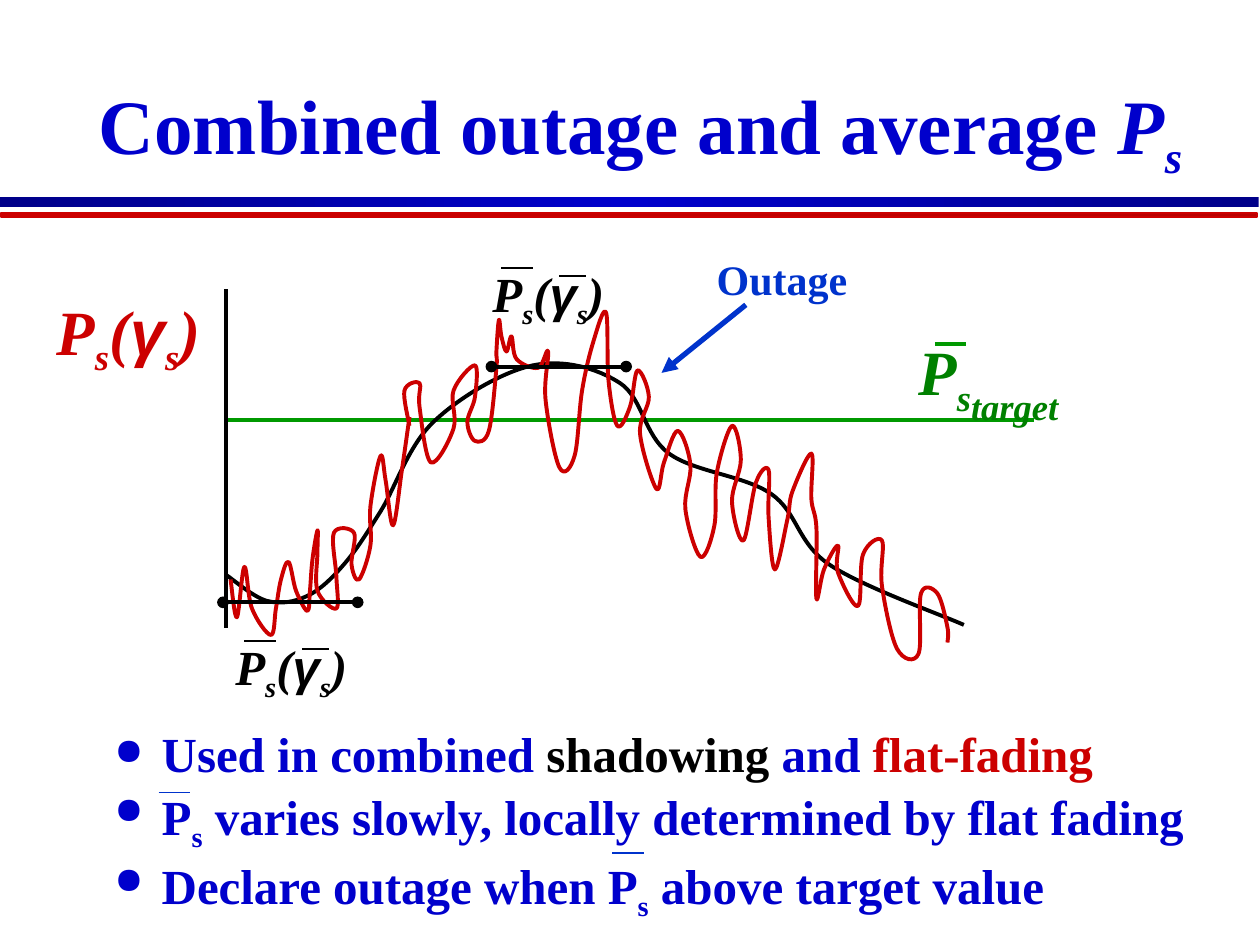
from copy import deepcopy
from dataclasses import dataclass

from lxml import etree
from pptx import Presentation
from pptx.dml.color import RGBColor
from pptx.enum.shapes import MSO_CONNECTOR, MSO_SHAPE
from pptx.enum.text import MSO_ANCHOR, MSO_AUTO_SIZE, PP_ALIGN
from pptx.oxml.ns import qn
from pptx.util import Pt

STRAIGHT = MSO_CONNECTOR.STRAIGHT
RECTANGLE = MSO_SHAPE.RECTANGLE
BOTTOM, TOP = MSO_ANCHOR.BOTTOM, MSO_ANCHOR.TOP
CENTER, LEFT = PP_ALIGN.CENTER, PP_ALIGN.LEFT
FIT_SHAPE = MSO_AUTO_SIZE.SHAPE_TO_FIT_TEXT

BLUE = RGBColor(0x00, 0x00, 0xCC)
DARK_BLUE = RGBColor(0x00, 0x00, 0x89)
BRIGHT_BLUE = RGBColor(0x00, 0x33, 0xCC)
RED = RGBColor(0xCC, 0x00, 0x00)
DARK_RED = RGBColor(0xB9, 0x00, 0x00)
GREEN = RGBColor(0x00, 0x99, 0x00)
DARK_GREEN = RGBColor(0x00, 0x80, 0x00)
BLACK = RGBColor(0x00, 0x00, 0x00)

SERIF, SANS = "Times New Roman", "Arial"
SUB, LOW_SUB = -25, -40  # baseline shift, percent
GRID = 0.72  # points per unit of the curve knots


@dataclass(frozen=True)
class Run:
    text: str
    base: int = 0
    font: str = SERIF
    color: RGBColor | None = None
    italic: bool | None = None


@dataclass(frozen=True)
class Bullet:
    spacing: float
    runs: tuple[Run, ...]


@dataclass(frozen=True)
class Curve:
    color: RGBColor
    knots: tuple[tuple[int, int], ...]


P_GAMMA = (Run("P"), Run("s", SUB), Run("("), Run("γ", font=SANS), Run("s", SUB), Run(")"))
BULLETS = (
    Bullet(1.1, (Run("Used in combined "), Run("shadowing", color=BLACK), Run(" and "),
                 Run("flat-fading", color=RED))),
    Bullet(0.8, (Run("P"), Run("s", SUB),
                 Run(" varies slowly, locally determined by flat fading"))),
    Bullet(0.9, (Run("Declare outage when P"), Run("s", SUB), Run(" above target value"))),
)
SHADOWING = Curve(BLACK, (
    (179, 456), (212, 477), (244, 473), (273, 448), (302, 406), (344, 335),
    (423, 290), (492, 304), (531, 360), (612, 392), (658, 448), (765, 496)))
FADING_RISE = Curve(RED, (
    (183, 460), (188, 490), (194, 450), (200, 483), (215, 504), (219, 483),
    (223, 460), (229, 446), (235, 469), (244, 485), (246, 469), (248, 444),
    (252, 421), (252, 438), (252, 469), (267, 483), (267, 458), (265, 423),
    (281, 423), (279, 448), (285, 460), (294, 433), (294, 402), (302, 362),
    (306, 381), (312, 417), (319, 373), (325, 331)))
FADING_FALL = Curve(RED, (
    (325, 338), (321, 310), (333, 304), (333, 323), (342, 367), (360, 340),
    (360, 310), (377, 290), (377, 315), (371, 335), (377, 350), (388, 342),
    (394, 292), (394, 279), (396, 254), (398, 267), (402, 279), (406, 267),
    (410, 285), (427, 292), (435, 279), (433, 317), (444, 371), (456, 362),
    (462, 310), (471, 271), (481, 248), (483, 302), (490, 338), (500, 323),
    (506, 294), (515, 315), (508, 344), (521, 388), (527, 367), (538, 342),
    (548, 369), (544, 404), (556, 442), (567, 417), (569, 375), (581, 338),
    (588, 365), (581, 398), (590, 429), (600, 383), (610, 373), (610, 410),
    (615, 452), (625, 412), (629, 390), (644, 360), (644, 396), (648, 419),
    (648, 475), (654, 452), (665, 433), (665, 454), (681, 481), (685, 440),
    (700, 429), (700, 465), (712, 515), (729, 519), (731, 471), (744, 471),
    (752, 498), (752, 510)))


def add_run(p, text: str, *, size: float, color: RGBColor, font: str = SERIF,
            italic: bool = False, base: int = 0) -> None:
    r = p.add_run()
    r.text = text
    r.font.name, r.font.size = font, Pt(size)
    r.font.bold, r.font.italic = True, italic
    r.font.color.rgb = color
    if base:
        r._r.get_or_add_rPr().set("baseline", str(base * 1000))


def add_runs(p, runs: tuple[Run, ...], size: float, color: RGBColor, italic: bool = False) -> None:
    for run in runs:
        add_run(p, run.text, size=size, color=run.color or color, font=run.font,
                italic=italic if run.italic is None else run.italic, base=run.base)


def add_box(shapes, x: float, y: float, w: float, h: float, wrap: bool = False):
    tf = shapes.add_textbox(Pt(x), Pt(y), Pt(w), Pt(h)).text_frame
    tf.word_wrap = wrap
    if not wrap:
        tf.auto_size = FIT_SHAPE
    return tf


def add_line(shapes, x1: float, y1: float, x2: float, y2: float, color: RGBColor,
             width: float = 2.25, head: str = "", tail: str = "") -> None:
    sp = shapes.add_connector(STRAIGHT, Pt(x1), Pt(y1), Pt(x2), Pt(y2))
    sp.line.color.rgb, sp.line.width = color, Pt(width)
    for tag, kind in (("a:headEnd", head), ("a:tailEnd", tail)):
        if kind:
            etree.SubElement(sp.line._get_or_add_ln(), qn(tag), type=kind)
    etree.SubElement(sp._element.spPr, qn("a:effectLst"))


def add_rule(shapes, x: float, y: float, w: float, h: float, colors: tuple[RGBColor, ...]):
    """Draw a bar filled with a left-to-right gradient of evenly spaced colours."""
    sp = shapes.add_shape(RECTANGLE, Pt(x), Pt(y), Pt(w), Pt(h))
    sp.shadow.inherit = False
    sp.fill.gradient()
    sp.fill.gradient_angle = 0
    stops = sp._element.spPr.find(qn("a:gradFill")).find(qn("a:gsLst"))
    while len(stops) < len(colors):
        stops.append(deepcopy(stops[0]))
    for i, (stop, color) in enumerate(zip(sp.fill.gradient_stops, colors)):
        stop.position = i / (len(colors) - 1)
        stop.color.rgb = color
    sp.line.fill.background()
    return sp


def add_curve(shapes, curve: Curve) -> None:
    """Draw a smooth open curve through the knots (Catmull-Rom as Béziers)."""
    pts = [(Pt(x * GRID), Pt(y * GRID)) for x, y in curve.knots]
    builder = shapes.build_freeform(*pts[0])
    builder.add_line_segments(pts[1:], close=False)
    sp = builder.convert_to_shape()
    sp.shadow.inherit = False
    sp.fill.background()
    sp.line.color.rgb, sp.line.width = curve.color, Pt(2.25)
    padded = [pts[0], *pts, pts[-1]]
    for i, segment in enumerate(list(sp._element.iter(qn("a:lnTo")))):
        before, start, end, after = padded[i:i + 4]
        controls = ([s + (e - b) / 6 for b, s, e in zip(before, start, end)],
                    [e - (a - s) / 6 for s, e, a in zip(start, end, after)], end)
        bezier = etree.Element(qn("a:cubicBezTo"))
        for x, y in controls:
            etree.SubElement(bezier, qn("a:pt"), x=str(round(x - sp.left)), y=str(round(y - sp.top)))
        segment.getparent().replace(segment, bezier)


def add_average(shapes, x: float, y: float) -> None:
    """Draw the averaged error symbol with its two overbars as one group."""
    group = shapes.add_group_shape().shapes
    add_runs(add_box(group, x, y, 78.5, 41).paragraphs[0], P_GAMMA, 28, BLACK, italic=True)
    for dx, dy, w in ((12.2, 6.2, 18), (45.4, 10.8, 15.1)):
        add_line(group, x + dx, y + dy, x + dx + w, y + dy, BLACK, 1)


def add_bullet(p, bullet: Bullet) -> None:
    p.line_spacing, p.space_before = bullet.spacing, Pt(5.6)
    pPr = p._p.get_or_add_pPr()
    pPr.set("marL", str(Pt(27)))
    pPr.set("indent", str(Pt(-27)))
    etree.SubElement(etree.SubElement(pPr, qn("a:buClr")), qn("a:srgbClr"), val=str(BLUE))
    etree.SubElement(pPr, qn("a:buSzPct"), val="75000")
    etree.SubElement(pPr, qn("a:buChar"), char="●")
    add_runs(p, bullet.runs, 28, BLUE)


def main() -> None:
    prs = Presentation()
    prs.slide_width, prs.slide_height = Pt(720), Pt(540)
    shapes = prs.slides.add_slide(prs.slide_layouts[6]).shapes

    add_rule(shapes, 0, 112.3, 719.3, 5.8, (DARK_BLUE, BLUE, DARK_BLUE))
    red_rule = add_rule(shapes, 0.7, 121.7, 717.8, 2.2, (RED, DARK_RED))
    red_rule.line.color.rgb, red_rule.line.width = RED, Pt(1)

    title = add_box(shapes, 48.2, 18, 635.8, 90, wrap=True)
    title.vertical_anchor = BOTTOM
    title.paragraphs[0].alignment = CENTER
    add_runs(title.paragraphs[0], (Run("Combined outage and average "), Run("P", italic=True),
                                   Run("s", SUB, italic=True)), 44, BLUE)

    body = add_box(shapes, 58.3, 406.8, 628.6, 112.3, wrap=True)
    body.vertical_anchor = TOP
    for i, bullet in enumerate(BULLETS):
        p = body.add_paragraph() if i else body.paragraphs[0]
        p.alignment = LEFT
        add_bullet(p, bullet)

    add_runs(add_box(shapes, 25.2, 163.4, 97.2, 50.4).paragraphs[0], P_GAMMA, 36, RED, italic=True)
    add_line(shapes, 128.9, 239.8, 591.1, 239.8, GREEN)
    add_runs(add_box(shapes, 517.7, 186.5, 105.8, 50.4).paragraphs[0],
             (Run("P"), Run("s", SUB), Run("target", LOW_SUB)), 36, DARK_GREEN, italic=True)
    add_line(shapes, 534.2, 196.6, 552.2, 196.6, GREEN)
    add_line(shapes, 128.9, 358.6, 128.9, 164.9, BLACK)
    for curve in (SHADOWING, FADING_RISE, FADING_FALL):
        add_curve(shapes, curve)

    for x, y in ((280.8, 209.5), (127.4, 344.2)):
        add_line(shapes, x, y, x + 77, y, BLACK, head="oval", tail="oval")
    for x, y in ((274.3, 146.9), (127.4, 360)):
        add_average(shapes, x, y)
    for x, y in ((90.7, 452.9), (349.9, 487.4)):
        add_line(shapes, x, y, x + 18, y, BRIGHT_BLUE, 1)

    add_line(shapes, 426.2, 174.2, 378, 213.1, BRIGHT_BLUE, 3, tail="triangle")
    add_runs(add_box(shapes, 402.5, 141.1, 89.3, 36).paragraphs[0], (Run("Outage"),), 24, BRIGHT_BLUE)

    prs.save("out.pptx")


if __name__ == "__main__":
    main()
